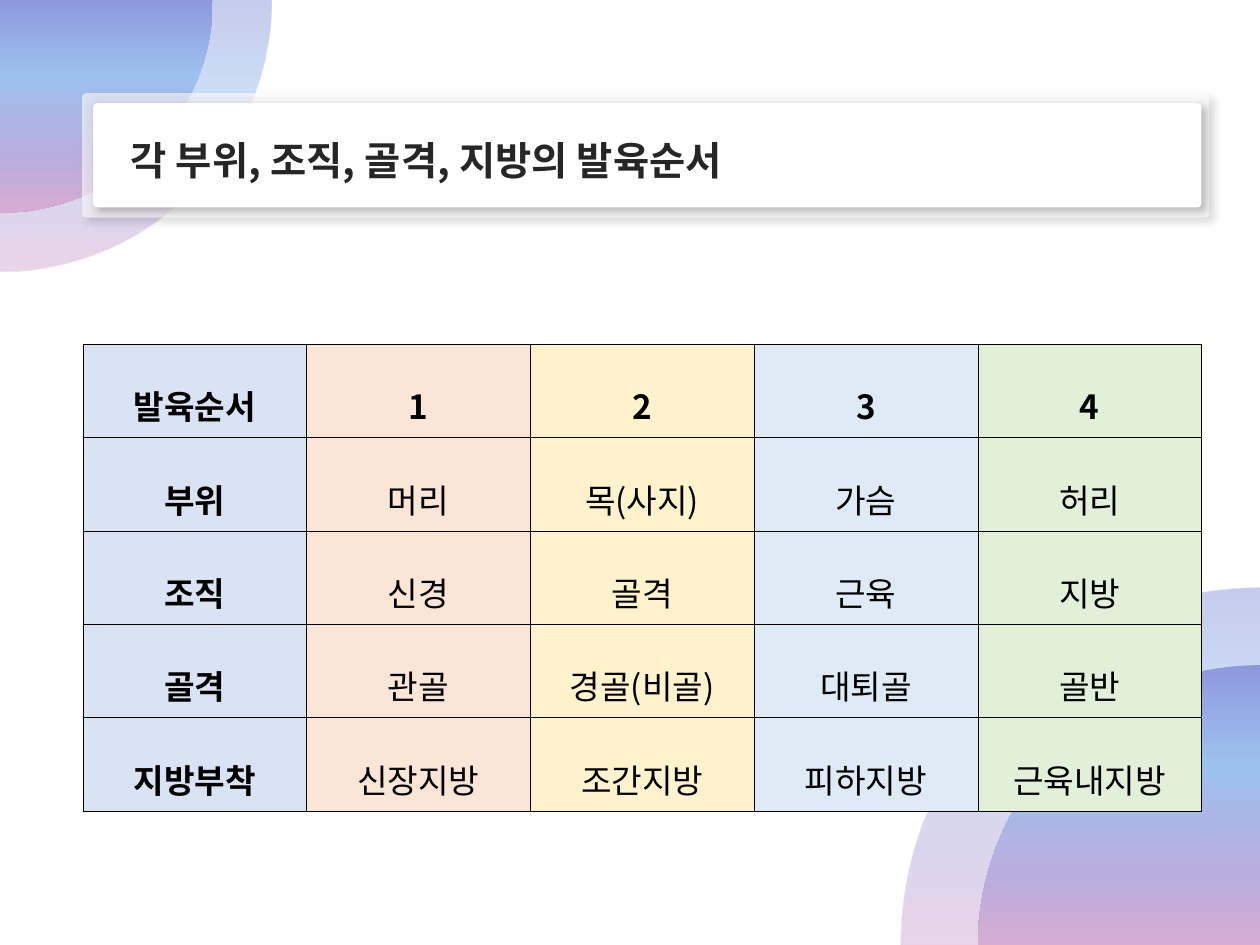
import lxml.etree
import pptx
import pptx.dml.color
import pptx.enum.shapes
import pptx.enum.text
import pptx.oxml.ns
import pptx.util
from pptx.util import Cm

FONT = "Noto Sans CJK KR"
GRADIENT = [(0, "8E99DD"), (35, "9DC1EF"), (74, "B9ADDE"), (100, "D7ACD2")]
COLUMN_FILLS = ["DAE3F3", "FBE5D6", "FFF2CC", "DEEBF7", "E2F0D9"]
ARC_HANDLE = 0.55  # Bezier handle of a quarter circle, as a share of its radius
ROWS = [
    ["발육순서", "1", "2", "3", "4"],
    ["부위", "머리", "목(사지)", "가슴", "허리"],
    ["조직", "신경", "골격", "근육", "지방"],
    ["골격", "관골", "경골(비골)", "대퇴골", "골반"],
    ["지방부착", "신장지방", "조간지방", "피하지방", "근육내지방"],
]


def color(hex_string):
    return pptx.dml.color.RGBColor.from_string(hex_string)


def add_xml(parent, tag, **attributes):
    values = {name: str(value) for name, value in attributes.items()}
    return lxml.etree.SubElement(parent, pptx.oxml.ns.qn(tag), values)


def add_xml_color(parent, hex_string, opacity=100):
    element = add_xml(parent, "a:srgbClr", val=hex_string)
    if opacity < 100:
        add_xml(element, "a:alpha", val=opacity * 1000)


def format_text(paragraph, size, hex_string, bold):
    font = paragraph.font
    font.size = pptx.util.Pt(size)
    font.bold = bold
    font.color.rgb = color(hex_string)
    font.name = FONT
    properties = paragraph._p.pPr.find(pptx.oxml.ns.qn("a:defRPr"))
    properties.set("kern", "0")
    add_xml(properties, "a:ea", typeface=FONT)


def fill_with_gradient(shape, opacity):
    shape.fill.background()
    empty_fill = shape.element.spPr.find(pptx.oxml.ns.qn("a:noFill"))
    gradient = lxml.etree.Element(pptx.oxml.ns.qn("a:gradFill"), rotWithShape="1")
    stops = add_xml(gradient, "a:gsLst")
    for position, hex_string in GRADIENT:
        stop = add_xml(stops, "a:gs", pos=position * 1000)
        add_xml_color(stop, hex_string, opacity)
    add_xml(gradient, "a:lin", ang=90 * 60000, scaled=0)
    empty_fill.getparent().replace(empty_fill, gradient)


def round_outer_edge(shape):
    """Turn the long side of a right-angled triangle into a quarter circle."""
    points = list(shape.element.spPr.iter(pptx.oxml.ns.qn("a:pt")))
    center, start, end = [(int(point.get("x")), int(point.get("y"))) for point in points]
    first_handle = [s + ARC_HANDLE * (e - c) for c, s, e in zip(center, start, end)]
    second_handle = [e + ARC_HANDLE * (s - c) for c, s, e in zip(center, start, end)]
    straight = points[2].getparent()
    curve = lxml.etree.Element(pptx.oxml.ns.qn("a:cubicBezTo"))
    for x, y in (first_handle, second_handle, end):
        add_xml(curve, "a:pt", x=round(x), y=round(y))
    straight.getparent().replace(straight, curve)


def add_quarter_disc(slide, center_x, center_y, radius, direction, opacity):
    """Draw a quarter disc that opens right and down (1) or left and up (-1)."""
    reach = direction * radius
    builder = slide.shapes.build_freeform(Cm(center_x), Cm(center_y))
    builder.add_line_segments([
        (Cm(center_x), Cm(center_y + reach)),
        (Cm(center_x + reach), Cm(center_y))])
    disc = builder.convert_to_shape()
    round_outer_edge(disc)
    disc.shadow.inherit = False
    disc.line.fill.background()
    fill_with_gradient(disc, opacity)


def add_corner(slide, center_x, center_y, radii, direction):
    """Draw a pale outer quarter disc with a solid one on it."""
    for radius, opacity in zip(radii, (50, 100)):
        add_quarter_disc(slide, center_x, center_y, radius, direction, opacity)


def add_panel(slide, left, top, width, height, opacity):
    panel = slide.shapes.add_shape(
        pptx.enum.shapes.MSO_SHAPE.ROUNDED_RECTANGLE,
        Cm(left), Cm(top), Cm(width), Cm(height))
    panel.adjustments[0] = 0.04
    panel.line.fill.background()
    panel.fill.solid()
    panel.fill.fore_color.rgb = color("FFFFFF")
    if opacity < 100:
        fill_color = panel.element.spPr.find(
            pptx.oxml.ns.qn("a:solidFill") + "/" + pptx.oxml.ns.qn("a:srgbClr"))
        add_xml(fill_color, "a:alpha", val=opacity * 1000)
    panel.shadow.inherit = False
    effects = panel.element.spPr.find(pptx.oxml.ns.qn("a:effectLst"))
    shadow = add_xml(effects, "a:outerShdw", blurRad=pptx.util.Pt(4),
                     dist=pptx.util.Pt(3), dir=45 * 60000, algn="tl", rotWithShape=0)
    add_xml_color(shadow, "000000", 20)


def add_title(slide, left, top, width, height):
    add_panel(slide, left, top, width, height, 60)
    add_panel(slide, left + 0.23, top + 0.2, width - 0.39, height - 0.41, 100)
    title = slide.shapes.title
    title.left, title.top = Cm(left + 0.73), Cm(top + 0.74)
    title.width, title.height = Cm(18.75), Cm(1.22)
    title.element.getparent().append(title.element)  # in front of the panels
    frame = title.text_frame
    frame.text = "각 부위, 조직, 골격, 지방의 발육순서"
    frame.word_wrap = True
    frame.auto_size = pptx.enum.text.MSO_AUTO_SIZE.NONE
    frame.vertical_anchor = pptx.enum.text.MSO_ANCHOR.MIDDLE
    frame.paragraphs[0].alignment = pptx.enum.text.PP_ALIGN.LEFT
    format_text(frame.paragraphs[0], 22.5, "262626", True)


def format_cell(cell, text, fill, bold):
    cell.text = text
    cell.vertical_anchor = pptx.enum.text.MSO_ANCHOR.MIDDLE
    cell.margin_left = cell.margin_right = Cm(0.13)
    cell.margin_top = cell.margin_bottom = Cm(0.03)
    paragraph = cell.text_frame.paragraphs[0]
    paragraph.alignment = pptx.enum.text.PP_ALIGN.CENTER
    paragraph.line_spacing = 1.6
    format_text(paragraph, 19, "000000", bold)
    properties = cell._tc.get_or_add_tcPr()
    for side in ("a:lnL", "a:lnR", "a:lnT", "a:lnB"):
        border = add_xml(properties, side, w=pptx.util.Pt(0.28))
        add_xml_color(add_xml(border, "a:solidFill"), "000000")
    cell.fill.solid()
    cell.fill.fore_color.rgb = color(fill)


def add_growth_table(slide, left, top, width, height):
    table = slide.shapes.add_table(
        len(ROWS), len(COLUMN_FILLS),
        Cm(left), Cm(top), Cm(width), Cm(height)).table
    table.first_row = table.horz_banding = False
    for row_index, row in enumerate(ROWS):
        for column_index, (text, fill) in enumerate(zip(row, COLUMN_FILLS)):
            is_heading = row_index == 0 or column_index == 0
            format_cell(table.cell(row_index, column_index), text, fill, is_heading)


def main():
    presentation = pptx.Presentation()
    presentation.slide_width, presentation.slide_height = Cm(25.4), Cm(19.05)
    slide = presentation.slides.add_slide(presentation.slide_layouts[5])
    add_corner(slide, 25.4, 19.1, (7.25, 5.69), -1)
    add_corner(slide, 0, 0, (5.48, 4.29), 1)
    add_title(slide, 1.65, 1.88, 22.73, 2.51)
    add_growth_table(slide, 1.67, 6.94, 22.55, 9.41)
    presentation.save("out.pptx")


if __name__ == "__main__":
    main()
